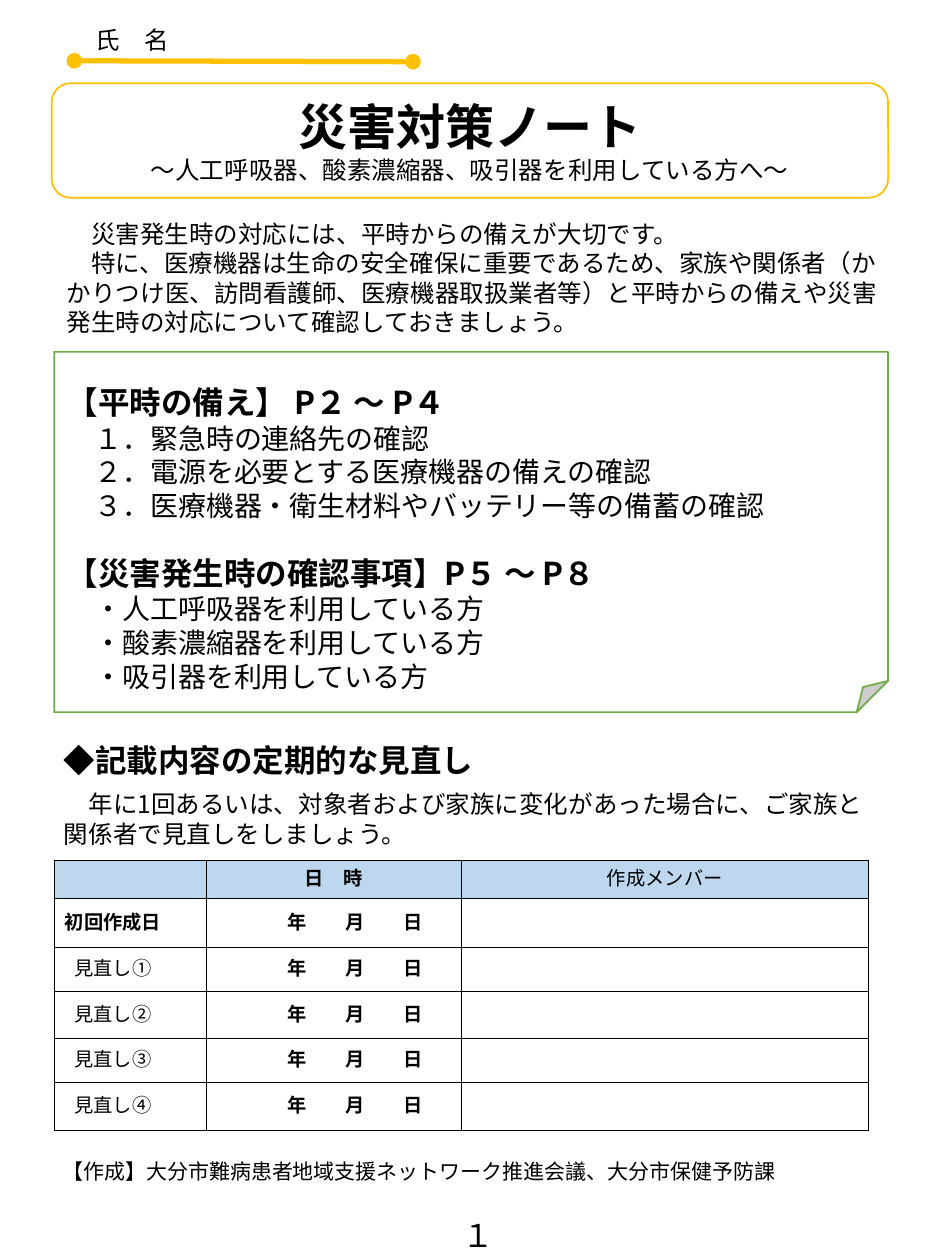
from pptx import Presentation
from pptx.dml.color import RGBColor
from pptx.enum.shapes import MSO_CONNECTOR, MSO_SHAPE
from pptx.enum.text import MSO_ANCHOR, PP_ALIGN
from pptx.oxml.ns import qn
from pptx.util import Pt
from lxml.etree import SubElement

FONT = "Noto Sans CJK JP"
GOLD, GREEN, BLUE = "FFC000", "70AD47", "BDD7EE"
BLACK, WHITE = "000000", "FFFFFF"


def color(code):
    """Turn a hex string into a colour."""
    return RGBColor.from_string(code)


def style(para, size, bold=False, align=PP_ALIGN.LEFT, font=FONT):
    """Format a paragraph and its runs."""
    para.alignment = align
    para.line_spacing = Pt(round(size * 1.2, 1))
    for run in para.runs:
        run.font.size = Pt(size)
        run.font.bold = bold
        run.font.name = font
        run.font.color.rgb = color(BLACK)
        SubElement(run.font._element, qn("a:ea"), typeface=font)


def indent(para, left=0, first=0):
    """Set the left and first-line indents of a paragraph."""
    props = para._p.get_or_add_pPr()
    props.set("marL", str(Pt(left)))
    props.set("indent", str(Pt(first)))


def write(frame, lines):
    """Fill a text frame with one paragraph per line and return them."""
    frame.word_wrap = True
    frame.text = "\n".join(lines)
    return frame.paragraphs


def add_text(slide, box, lines, size, **look):
    """Add a text box in a single style and return its paragraphs."""
    shape = slide.shapes.add_textbox(*map(Pt, box))
    paras = write(shape.text_frame, lines)
    for para in paras:
        style(para, size, **look)
    return paras


def add_panel(slide, kind, box, line):
    """Add a white outlined shape."""
    shape = slide.shapes.add_shape(kind, *map(Pt, box))
    shape.shadow.inherit = False
    shape.fill.solid()
    shape.fill.fore_color.rgb = color(WHITE)
    shape.line.color.rgb = color(line)
    shape.line.width = Pt(1)
    return shape


def add_rule(slide, start, end):
    """Add the name line with round ends."""
    rule = slide.shapes.add_connector(MSO_CONNECTOR.STRAIGHT, *map(Pt, start + end))
    rule.line.color.rgb = color(GOLD)
    rule.line.width = Pt(3)
    for tag in ("a:headEnd", "a:tailEnd"):
        SubElement(rule.line._ln, qn(tag), type="oval")
    SubElement(rule._element.spPr, qn("a:effectLst"))


def add_title(slide):
    """Add the title panel."""
    panel = add_panel(slide, MSO_SHAPE.ROUNDED_RECTANGLE, (29.5, 47.5, 478, 65.5), GOLD)
    panel.text_frame.vertical_anchor = MSO_ANCHOR.MIDDLE
    title, sub = write(panel.text_frame, [
        "災害対策ノート", "～人工呼吸器、酸素濃縮器、吸引器を利用している方へ～"])
    style(title, 28, True, PP_ALIGN.CENTER)
    style(sub, 14, align=PP_ALIGN.CENTER)


def add_index(slide):
    """Add the folded panel that lists the contents."""
    panel = add_panel(slide, MSO_SHAPE.FOLDED_CORNER, (31, 201, 476.5, 206), GREEN)
    for guides in panel._element.iter(qn("a:avLst")):
        SubElement(guides, qn("a:gd"), name="adj", fmla="val 8700")
    frame = panel.text_frame
    frame.vertical_anchor = MSO_ANCHOR.TOP
    frame.margin_top = Pt(18)
    paras = write(frame, [
        "【平時の備え】 P２ ～ P４",
        "１．緊急時の連絡先の確認",
        "２．電源を必要とする医療機器の備えの確認",
        "３．医療機器・衛生材料やバッテリー等の備蓄の確認",
        "【災害発生時の確認事項】P５ ～ P８",
        "・人工呼吸器を利用している方",
        "・酸素濃縮器を利用している方",
        "・吸引器を利用している方"])
    for para in paras:
        head = para.text.startswith("【")
        style(para, 18 if head else 16, head)
        indent(para, 0 if head else 16)
    paras[4].space_before = Pt(18.5)


def fill_cell(cell, text, back, left=0, bold=False, align=PP_ALIGN.LEFT):
    """Fill, border and label a table cell."""
    props = cell._tc.get_or_add_tcPr()
    for side in ("L", "R", "T", "B"):
        edge = SubElement(props, qn(f"a:ln{side}"), w=str(Pt(0.5)))
        paint = SubElement(edge, qn("a:solidFill"))
        SubElement(paint, qn("a:srgbClr"), val=BLACK)
    cell.fill.solid()
    cell.fill.fore_color.rgb = color(back)
    cell.vertical_anchor = MSO_ANCHOR.MIDDLE
    cell.margin_left = Pt(left)
    cell.margin_right = cell.margin_top = cell.margin_bottom = 0
    cell.text_frame.text = text
    para = cell.text_frame.paragraphs[0]
    style(para, 11, bold, align)
    if "\t" in text:
        tabs = SubElement(para._p.get_or_add_pPr(), qn("a:tabLst"))
        for stop in (33, 66):
            SubElement(tabs, qn("a:tab"), pos=str(Pt(stop)), algn="l")


def add_log(slide):
    """Add the table of review dates and members."""
    wide, high = (87, 145.5, 233), (18.5, 28.5, 25, 27, 25, 27.5)
    box = (31, 491.5, sum(wide), sum(high))
    table = slide.shapes.add_table(len(high), len(wide), *map(Pt, box)).table
    for col, width in zip(table.columns, wide):
        col.width = Pt(width)
    for row, height in zip(table.rows, high):
        row.height = Pt(height)
    for col, text in enumerate(("", "日　時", "作成メンバー")):
        fill_cell(table.cell(0, col), text, BLUE, 0, col == 1, PP_ALIGN.CENTER)
    names = ["初回作成日"] + [f"見直し{mark}" for mark in "①②③④"]
    for row, name in enumerate(names, 1):
        first = row == 1
        fill_cell(table.cell(row, 0), name, WHITE, 6 if first else 11.5, first)
        fill_cell(table.cell(row, 1), "年\t月\t日", WHITE, 46.5, True)
        fill_cell(table.cell(row, 2), "", WHITE)


def main():
    """Build the slide and save it."""
    deck = Presentation()
    deck.slide_width, deck.slide_height = Pt(540), Pt(720)
    slide = deck.slides.add_slide(deck.slide_layouts[6])
    add_text(slide, (47.5, 10.5, 68, 24), ["氏　名"], 14)
    add_rule(slide, (42.5, 34.75), (236, 35.25))
    add_title(slide)
    intro = add_text(slide, (31, 121.5, 481.5, 75), [
        "災害発生時の対応には、平時からの備えが大切です。",
        "特に、医療機器は生命の安全確保に重要であるため、家族や関係者（かかりつけ医、"
        "訪問看護師、医療機器取扱業者等）と平時からの備えや災害発生時の対応について"
        "確認しておきましょう。"], 14)
    for para in intro:
        indent(para, first=14)
    add_index(slide)
    add_text(slide, (29.5, 420, 489.5, 29), ["◆記載内容の定期的な見直し"], 18, bold=True)
    review = add_text(slide, (29.5, 447.5, 489.5, 41), [
        "年に1回あるいは、対象者および家族に変化があった場合に、ご家族と",
        "関係者で見直しをしましょう。"], 14)
    indent(review[0], first=14)
    add_log(slide)
    add_text(slide, (28.5, 658.5, 480, 22), [
        "【作成】大分市難病患者地域支援ネットワーク推進会議、大分市保健予防課"], 12)
    add_text(slide, (257, 691.5, 32.5, 28.5), ["１"], 18,
             align=PP_ALIGN.CENTER, font="Calibri")
    deck.save("out.pptx")


if __name__ == "__main__":
    main()
